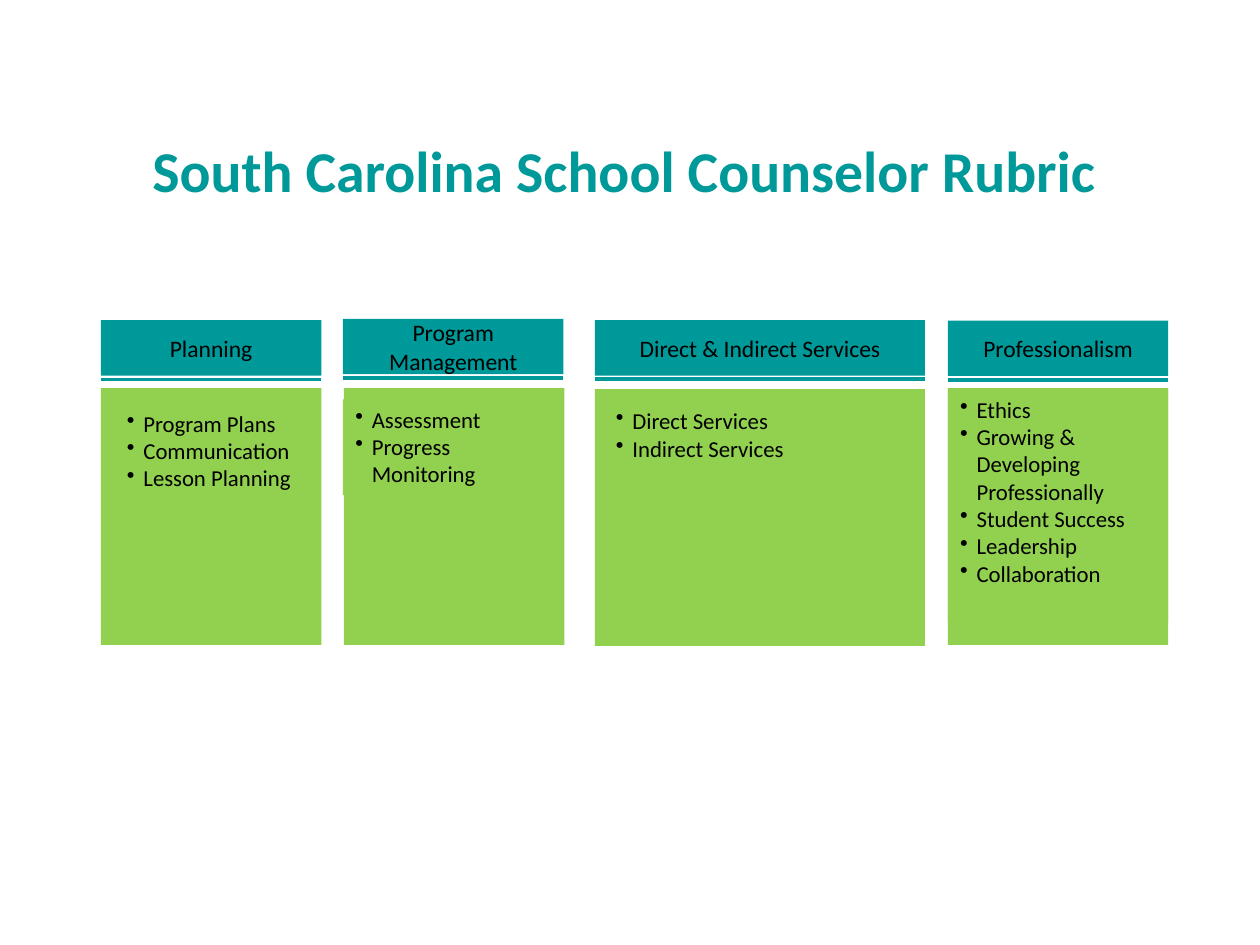
from dataclasses import dataclass

from lxml import etree
from pptx import Presentation
from pptx import util as u
from pptx.dml.color import RGBColor
from pptx.enum import shapes, text
from pptx.oxml import ns


@dataclass(frozen=True)
class Theme:
    font: str = "Calibri"
    teal: str = "00999A"
    green: str = "92D050"
    ink: str = "000000"
    title: float = 33
    head: float = 13.5
    body: float = 13
    rule: float = 2.25


class Deck:
    def __init__(self, theme):
        self.theme = theme
        self.file = Presentation()
        self.file.slide_width, self.file.slide_height = u.Pt(720), u.Pt(540)
        self.slide = self.file.slides.add_slide(self.file.slide_layouts[6])

    def style(self, para, size, color, bold=False):
        font = para.font
        font.name, font.size, font.bold = self.theme.font, u.Pt(size), bold
        font.color.rgb = RGBColor.from_string(color)

    def indent(self, para, left, first=0):
        props = para._p.get_or_add_pPr()
        props.set("marL", str(u.Pt(left)))
        props.set("indent", str(u.Pt(first)))
        return props

    def title(self, words, box, left):
        frame = self.slide.shapes.add_textbox(*map(u.Pt, box)).text_frame
        frame.word_wrap = True
        frame.vertical_anchor = text.MSO_ANCHOR.BOTTOM
        frame.margin_left = frame.margin_right = 0
        frame.margin_top = frame.margin_bottom = 0
        para = frame.paragraphs[0]
        para.text = words
        para.line_spacing = 0.85
        self.indent(para, left)
        self.style(para, self.theme.title, self.theme.teal, True)

    def block(self, box, color):
        shape = self.slide.shapes.add_shape(
            shapes.MSO_SHAPE.RECTANGLE, *map(u.Pt, box))
        shape.shadow.inherit = False
        shape.line.fill.background()
        if color:
            shape.fill.solid()
            shape.fill.fore_color.rgb = RGBColor.from_string(color)
        else:
            shape.fill.background()
        return shape

    def head(self, words, box):
        frame = self.block(box, self.theme.teal).text_frame
        frame.word_wrap = True
        frame.vertical_anchor = text.MSO_ANCHOR.MIDDLE
        para = frame.paragraphs[0]
        para.text = words
        para.alignment = text.PP_ALIGN.CENTER
        self.style(para, self.theme.head, self.theme.ink)

    def list(self, items, box, color):
        frame = self.block(box, color).text_frame
        frame.word_wrap = True
        frame.auto_size = text.MSO_AUTO_SIZE.SHAPE_TO_FIT_TEXT
        frame.vertical_anchor = text.MSO_ANCHOR.TOP
        frame.text = "\n".join(items)
        for para in frame.paragraphs:
            para.alignment = text.PP_ALIGN.LEFT
            self.style(para, self.theme.body, self.theme.ink)
            props = self.indent(para, 9.4, -9.4)
            mark = etree.Element(ns.qn("a:buChar"), char="•")
            props.insert_element_before(mark, "a:tabLst", "a:defRPr", "a:extLst")

    def rule(self, left, top, width):
        line = self.slide.shapes.add_connector(
            shapes.MSO_CONNECTOR.STRAIGHT,
            *map(u.Pt, (left, top, left + width, top)))
        line.line.width = u.Pt(self.theme.rule)
        line.line.color.rgb = RGBColor.from_string(self.theme.teal)
        etree.SubElement(line._element.spPr, ns.qn("a:effectLst"))


def main():
    theme = Theme()
    deck = Deck(theme)
    deck.title("South Carolina School Counselor Rubric",
               (64.8, 15.8, 590.4, 100.8), 22.3)

    green = theme.green
    columns = [
        ("Planning", 57.6, 126, 183, 216.9, (57.6, 221.8),
         ["Program Plans", "Communication", "Lesson Planning"],
         (65.5, 230.4, 110.9, 54.7), green),
        ("Program Management", 196, 126, 182.2, 216, (196.5, 221.8),
         ["Assessment", "Progress Monitoring"],
         (196, 228.2, 119.5, 54.7), green),
        ("Direct & Indirect Services", 340, 188.6, 183, 216.7, (340, 222.4),
         ["Direct Services", "Indirect Services"],
         (344.9, 229, 182.2, 38.9), None),
        ("Professionalism", 541.6, 126, 183.2, 217.3, (541.6, 221.8),
         ["Ethics", "Growing & Developing Professionally",
          "Student Success", "Leadership", "Collaboration"],
         (541.6, 222.4, 126, 133.2), green),
    ]
    for name, left, width, top, rule, panel, items, box, fill in columns:
        deck.block((*panel, width, 146.7), green)
        deck.head(name, (left, top, width, 31.7))
        deck.list(items, box, fill)
        deck.rule(left, rule, width)

    deck.file.save("out.pptx")


if __name__ == "__main__":
    main()
